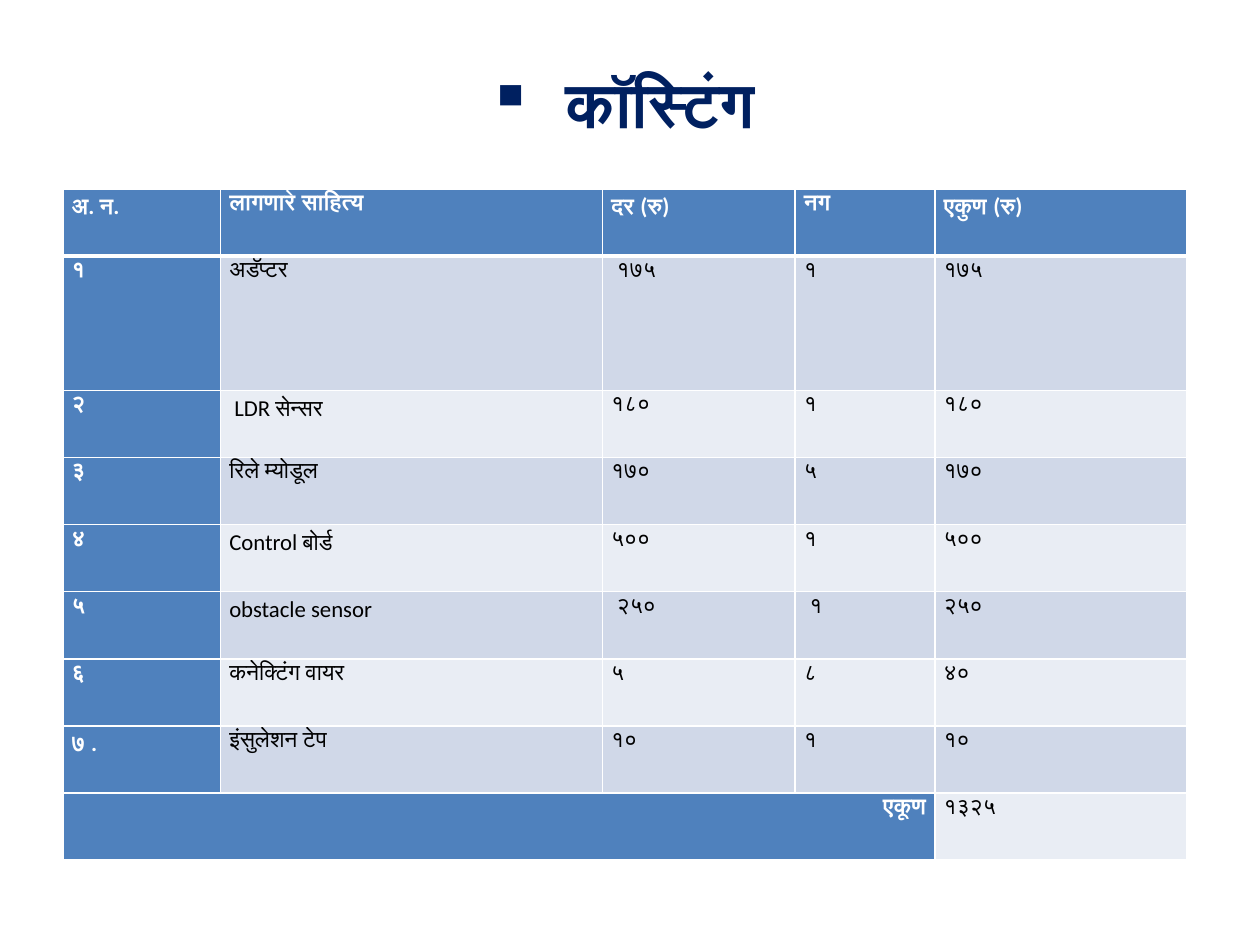
"""Build the costing slide: a bulleted title above a table of parts and prices."""
from lxml import etree
from pptx import Presentation
from pptx.dml.color import RGBColor
from pptx.enum.text import MSO_ANCHOR, PP_ALIGN
from pptx.oxml.ns import qn
from pptx.util import Inches, Pt

CENTER, RIGHT, MIDDLE = PP_ALIGN.CENTER, PP_ALIGN.RIGHT, MSO_ANCHOR.MIDDLE

TITLE = "कॉस्टिंग "
HEADINGS = ["अ. न.", "लागणारे साहित्य", "दर (रु)", "नग", "एकुण (रु)"]
ITEMS = [
    ["१", "अडॅप्टर\n\u00a0".replace("\u00a0", " "), " १७५", "१", "१७५"],
    ["२", " LDR सेन्सर", "१८०", "१", "१८०"],
    ["३", "रिले म्योडूल", "१७०", "५", "१७०"],
    ["४", "Control बोर्ड", "५००", "१", "५००"],
    ["५", "obstacle sensor", " २५०", " १", "२५०"],
    ["६", "कनेक्टिंग वायर", "५", "८", "४०"],
    ["७ .", "इंसुलेशन टेप", "१०", "१", "१०"],
]
ITEMS[0][1] = "अडॅप्टर"
TOTAL = ["एकूण", "", "", "", "१३२५"]

COLORS = {"title": "002060", "accent": "4F81BD", "odd": "D0D8E8",
          "even": "E9EDF4", "light": "FFFFFF", "dark": "000000"}
COLUMN_WIDTHS = [1.25, 3.03, 1.53, 1.11, 2]
ROW_HEIGHT = 5.33 / 10
TALL_ROW = 1


def set_font(paragraph, name, size, color, bold):
    font = paragraph.font
    font.name, font.size, font.bold = name, Pt(size), bold
    font.color.rgb = RGBColor.from_string(COLORS[color])


def add_title(slide):
    frame = slide.shapes.add_textbox(0, 0, Inches(10), Inches(1.62)).text_frame
    frame.word_wrap = True
    frame.vertical_anchor = MIDDLE
    heading = frame.paragraphs[0]
    heading.text = TITLE
    heading.alignment = CENTER
    set_font(heading, "Times New Roman", 36, "title", True)
    properties = heading._p.get_or_add_pPr()
    properties.set("marL", str(Inches(0.62)))
    properties.set("indent", str(-Inches(0.62)))
    bullet = etree.Element(qn("a:buChar"), char="▪")
    properties.insert(0, bullet)


def set_borders(cell, is_header):
    properties = cell._tc.get_or_add_tcPr()
    for position, side in enumerate(("lnL", "lnR", "lnT", "lnB")):
        weight = 3 if is_header and side == "lnB" else 1
        line = etree.Element(qn(f"a:{side}"), w=str(Pt(weight)))
        fill = etree.SubElement(line, qn("a:solidFill"))
        etree.SubElement(fill, qn("a:srgbClr"), val=COLORS["light"])
        properties.insert(position, line)


def fill_cell(cell, text, row, column):
    is_header = row == 0
    emphasized = is_header or column == 0
    cell.margin_left = cell.margin_right = Inches(0.07)
    cell.margin_top = cell.margin_bottom = 0
    cell.text = text
    entry = cell.text_frame.paragraphs[0]
    entry.line_spacing = 1.15
    if column == len(HEADINGS) - 1:
        entry.space_after = Pt(10)
    set_font(entry, "Calibri", 13, "light" if emphasized else "dark", emphasized)
    band = "accent" if emphasized else "odd" if row % 2 else "even"
    cell.fill.solid()
    cell.fill.fore_color.rgb = RGBColor.from_string(COLORS[band])
    set_borders(cell, is_header)


def add_costs(slide):
    rows = [HEADINGS, *ITEMS, TOTAL]
    costs = slide.shapes.add_table(
        len(rows), len(HEADINGS), Inches(0.5), Inches(1.5),
        Inches(sum(COLUMN_WIDTHS)), Inches(ROW_HEIGHT * (len(rows) + 1))).table
    for column, width in enumerate(COLUMN_WIDTHS):
        costs.columns[column].width = Inches(width)
    for row, texts in enumerate(rows):
        costs.rows[row].height = Inches(ROW_HEIGHT * (2 if row == TALL_ROW else 1))
        for column, text in enumerate(texts):
            fill_cell(costs.cell(row, column), text, row, column)
    last = len(rows) - 1
    total_label = costs.cell(last, 0)
    total_label.merge(costs.cell(last, len(HEADINGS) - 2))
    total_label.text_frame.paragraphs[0].alignment = RIGHT


def main():
    deck = Presentation()
    deck.slide_width, deck.slide_height = Inches(10), Inches(7.5)
    slide = deck.slides.add_slide(deck.slide_layouts[6])
    add_title(slide)
    add_costs(slide)
    deck.save("out.pptx")


if __name__ == "__main__":
    main()
